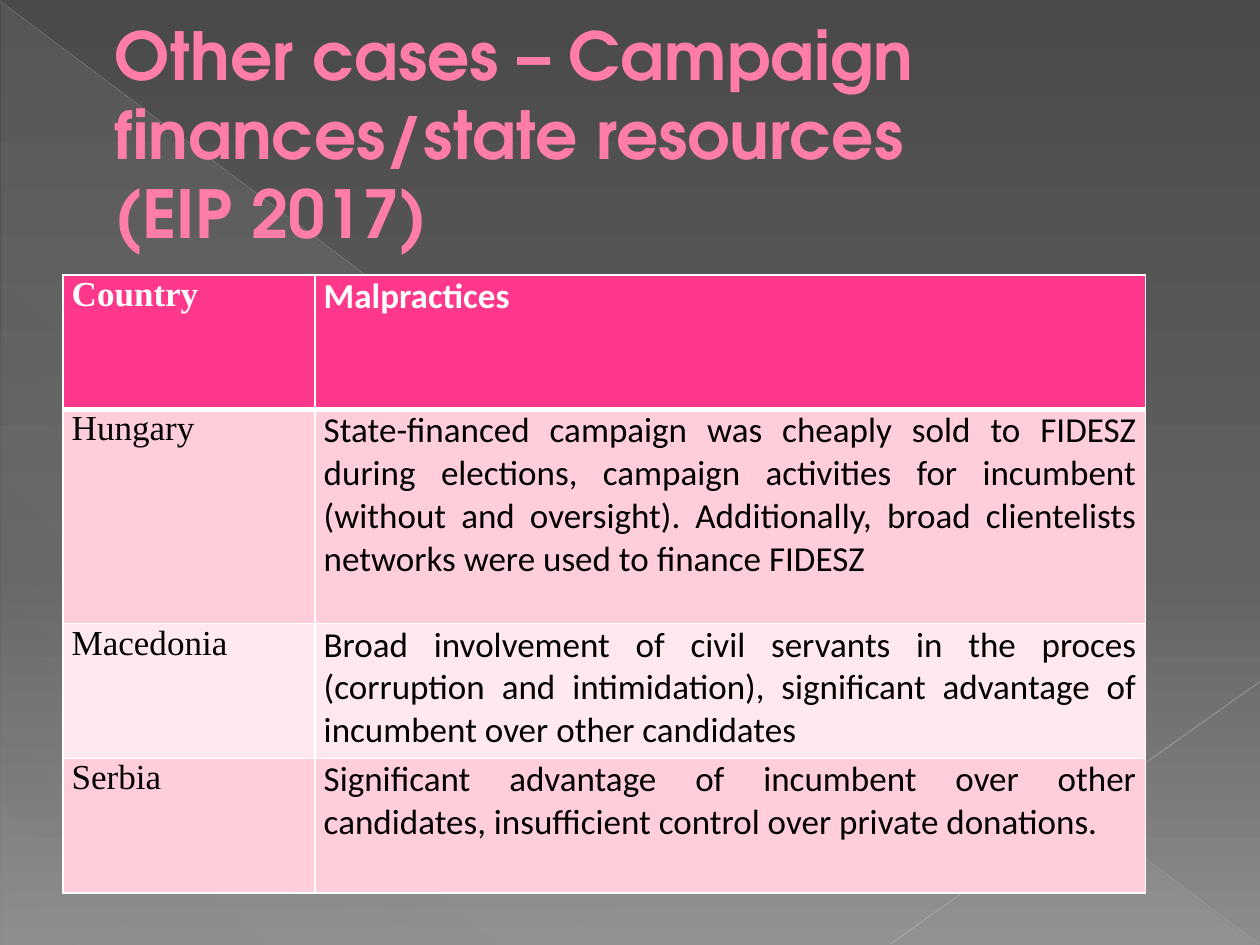
from lxml.etree import SubElement
from pptx import Presentation
from pptx.dml.color import RGBColor
from pptx.enum.shapes import MSO_CONNECTOR, MSO_SHAPE
from pptx.enum.text import MSO_ANCHOR, MSO_AUTO_SIZE, PP_ALIGN
from pptx.oxml.ns import qn
from pptx.util import Pt

TITLE = "Other cases – Campaign finances/state resources \v(EIP 2017)"
ROWS = [
    ("Country", "Malpractices"),
    ("Hungary", "State-financed campaign was cheaply sold to FIDESZ during elections, "
                "campaign activities for incumbent (without and oversight). Additionally, "
                "broad clientelists networks were used to finance FIDESZ"),
    ("Macedonia", "Broad involvement of civil servants in the proces (corruption and "
                  "intimidation), significant advantage of incumbent over other candidates"),
    ("Serbia", "Significant advantage of incumbent over other candidates, "
               "insufficient control over private donations."),
]
COLORS = {"title": "FF7DA7", "header": "FF388C", "odd": "FFCEDA", "even": "FFE8EE",
          "white": "FFFFFF", "black": "000000"}
BACKGROUND = [(0, "4A4A4A", 100), (60, "626262", 100), (100, "8C8C8C", 100)]
TRIANGLE = [(0, "D2D2D2", 10), (70, "D2D2D2", 8), (100, "D2D2D2", 1)]
DIAGONALS = [((0, 0.7), (719.3, 539.3), "BFBFBF", 0.39, 35),
             ((720, 389.5), (509, 539.3), "C6C6C6", 0.47, 45)]
COLUMN_WIDTHS = [144, 474.5]
ROW_HEIGHTS = [77, 122.4, 77, 77]
COLUMN_FONTS = ["Times New Roman", "Calibri"]


def add(parent, tag, **values):
    return SubElement(parent, qn(tag), {key: str(value) for key, value in values.items()})


def style(target, **values):
    for name, value in values.items():
        setattr(target, name, value)


def set_gradient(fill, properties, stops, angle):
    fill.solid()
    solid = properties.find(qn("a:solidFill"))
    gradient = add(properties, "a:gradFill", rotWithShape=1)
    stop_list = add(gradient, "a:gsLst")
    for position, color, opacity in stops:
        stop = add(stop_list, "a:gs", pos=position * 1000)
        add(add(stop, "a:srgbClr", val=color), "a:alpha", val=opacity * 1000)
    add(gradient, "a:lin", ang=angle * 60000, scaled=0)
    properties.replace(solid, gradient)


def add_backdrop(slide):
    fill = slide.background.fill
    fill.solid()
    set_gradient(fill, slide.element.find(".//" + qn("p:bgPr")), BACKGROUND, 90)
    triangle = slide.shapes.add_shape(MSO_SHAPE.RIGHT_TRIANGLE, Pt(0.7), Pt(1.4), Pt(718.6), Pt(538.6))
    triangle.shadow.inherit = False
    triangle.line.fill.background()
    set_gradient(triangle.fill, triangle.element.spPr, TRIANGLE, 133)
    for start, end, color, width, opacity in DIAGONALS:
        line = slide.shapes.add_connector(MSO_CONNECTOR.STRAIGHT, *map(Pt, start + end))
        line.line.width = Pt(width)
        line.line.color.rgb = RGBColor.from_string(color)
        properties = line.element.spPr
        add(properties.find(".//" + qn("a:srgbClr")), "a:alpha", val=opacity * 1000)
        add(properties, "a:effectLst")


def format_title(slide):
    title = slide.shapes.title
    slide.shapes.element.append(title.element)
    style(title, left=Pt(20), top=Pt(21), width=Pt(675), height=Pt(110))
    frame = title.text_frame
    style(frame, text=TITLE, word_wrap=True, auto_size=MSO_AUTO_SIZE.NONE,
          vertical_anchor=MSO_ANCHOR.MIDDLE, margin_left=Pt(45.4), margin_right=Pt(20))
    para = frame.paragraphs[0]
    para.alignment = PP_ALIGN.LEFT
    for span in para.runs:
        style(span.font, name="TeX Gyre Adventor", size=Pt(37.8), bold=True)
        span.font.color.rgb = RGBColor.from_string(COLORS["title"])


def set_borders(cell, top, bottom):
    properties = cell._tc.get_or_add_tcPr()
    widths = [("a:lnL", 1), ("a:lnR", 1), ("a:lnT", top), ("a:lnB", bottom)]
    for index, (tag, width) in enumerate(widths):
        border = add(properties, tag, w=Pt(width))
        add(add(border, "a:solidFill"), "a:srgbClr", val=COLORS["white"])
        properties.insert(index, border)


def add_cases_table(slide):
    table = slide.shapes.add_table(len(ROWS), len(COLUMN_WIDTHS), Pt(36), Pt(157),
                                   Pt(sum(COLUMN_WIDTHS)), Pt(sum(ROW_HEIGHTS))).table
    for column, width in zip(table.columns, COLUMN_WIDTHS):
        column.width = Pt(width)
    for index, (row, height, texts) in enumerate(zip(table.rows, ROW_HEIGHTS, ROWS)):
        row.height = Pt(height)
        header = index == 0
        fill = "header" if header else "odd" if index % 2 else "even"
        for cell, text, font in zip(row.cells, texts, COLUMN_FONTS):
            style(cell, text=text, margin_left=Pt(5), margin_right=Pt(5), margin_top=0, margin_bottom=0)
            cell.fill.solid()
            cell.fill.fore_color.rgb = RGBColor.from_string(COLORS[fill])
            set_borders(cell, 3 if index == 1 else 1, 3 if header else 1)
            para = cell.text_frame.paragraphs[0]
            para.alignment = PP_ALIGN.JUSTIFY
            span = para.runs[0]
            style(span.font, name=font, size=Pt(20), bold=header)
            span.font.color.rgb = RGBColor.from_string(COLORS["white" if header else "black"])


def main():
    deck = Presentation()
    style(deck, slide_width=Pt(720), slide_height=Pt(540))
    slide = deck.slides.add_slide(deck.slide_layouts[5])
    add_backdrop(slide)
    format_title(slide)
    add_cases_table(slide)
    deck.save("out.pptx")


if __name__ == "__main__":
    main()
